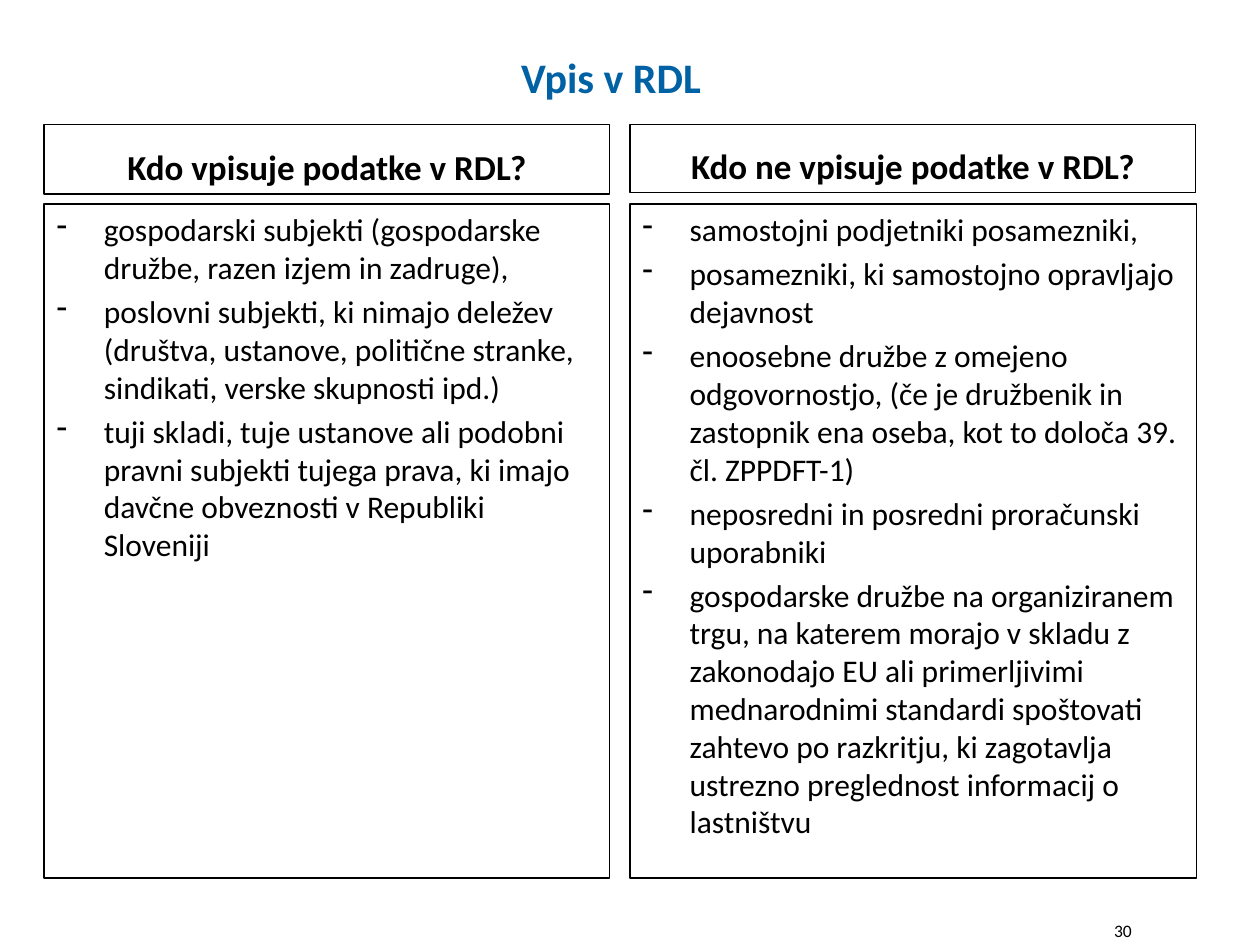
from lxml import etree
from pptx import Presentation
from pptx.dml.color import RGBColor
from pptx.enum.shapes import MSO_SHAPE
from pptx.enum.text import MSO_ANCHOR, PP_ALIGN
from pptx.oxml.ns import qn
from pptx.util import Pt

BLUE = RGBColor(0x00, 0x61, 0xA5)
BLACK = RGBColor(0x00, 0x00, 0x00)
FONT = "Calibri"
RECTANGLE = MSO_SHAPE.RECTANGLE
TOP, BOTTOM = MSO_ANCHOR.TOP, MSO_ANCHOR.BOTTOM
LEFT, CENTER, RIGHT = PP_ALIGN.LEFT, PP_ALIGN.CENTER, PP_ALIGN.RIGHT

HEADING_TOP, LIST_TOP, LIST_HEIGHT = 71.3, 116.6, 385.2
INDENT = 27
COLUMNS = [
    (25.2, 323.3, 39.6, "Kdo vpisuje podatke v RDL?", [
        "gospodarski subjekti (gospodarske družbe, razen izjem in zadruge),",
        "poslovni subjekti, ki nimajo deležev (društva, ustanove, politične "
        "stranke, sindikati, verske skupnosti ipd.)",
        "tuji skladi, tuje ustanove ali podobni pravni subjekti tujega prava, "
        "ki imajo davčne obveznosti v Republiki Sloveniji",
    ]),
    (360, 323.6, 38.9, "Kdo ne vpisuje podatke v RDL?", [
        "samostojni podjetniki posamezniki,",
        "posamezniki, ki samostojno opravljajo dejavnost",
        "enoosebne družbe z omejeno odgovornostjo, (če je družbenik in "
        "zastopnik ena oseba, kot to določa 39. čl. ZPPDFT-1)",
        "neposredni in posredni proračunski uporabniki",
        "gospodarske družbe na organiziranem trgu, na katerem morajo v skladu "
        "z zakonodajo EU ali primerljivimi mednarodnimi standardi spoštovati "
        "zahtevo po razkritju, ki zagotavlja ustrezno preglednost informacij "
        "o lastništvu",
    ]),
]


def style_paragraph(para, text, size, align, color=BLACK, bold=False):
    """Write one paragraph in a single font."""
    para.text = text
    para.alignment = align
    font = para.font
    font.name, font.size, font.bold = FONT, Pt(size), bold
    font.color.rgb = color


def add_dash(para):
    """Give a paragraph a hanging dash bullet."""
    properties = para._p.get_or_add_pPr()
    properties.set("marL", str(Pt(INDENT)))
    properties.set("indent", str(-Pt(INDENT)))
    etree.SubElement(properties, qn("a:buChar"), char="-")


def add_label(page, area, text, size, align, color=BLACK, bold=False):
    """Add a line of free text."""
    box = page.shapes.add_textbox(*map(Pt, area))
    box.text_frame.word_wrap = True
    style_paragraph(box.text_frame.paragraphs[0], text, size, align, color, bold)


def add_frame(page, area, anchor):
    """Add an outlined rectangle and return its text frame."""
    box = page.shapes.add_shape(RECTANGLE, *map(Pt, area))
    box.shadow.inherit = False
    box.fill.background()
    box.line.color.rgb = BLACK
    box.line.width = Pt(0.75)
    frame = box.text_frame
    frame.word_wrap = True
    frame.vertical_anchor = anchor
    return frame


def add_column(page, left, width, heading_height, heading, items):
    """Add a heading frame with a dashed list below it."""
    frame = add_frame(page, (left, HEADING_TOP, 323.3, heading_height), BOTTOM)
    style_paragraph(frame.paragraphs[0], heading, 20, CENTER, bold=True)
    frame = add_frame(page, (left, LIST_TOP, width, LIST_HEIGHT), TOP)
    for index, item in enumerate(items):
        para = frame.add_paragraph() if index else frame.paragraphs[0]
        if index:
            para.space_before = Pt(3.6)
        add_dash(para)
        style_paragraph(para, item, 18, LEFT)


def main():
    """Build the slide and save it."""
    deck = Presentation()
    deck.slide_width, deck.slide_height = Pt(720), Pt(540)
    page = deck.slides.add_slide(deck.slide_layouts[6])
    add_label(page, (25.2, 25.9, 648, 43.9), "Vpis v RDL", 24, CENTER, BLUE, True)
    for column in COLUMNS:
        add_column(page, *column)
    add_label(page, (545.8, 522, 108, 18), "30", 10, RIGHT)
    deck.save("out.pptx")


if __name__ == "__main__":
    main()
